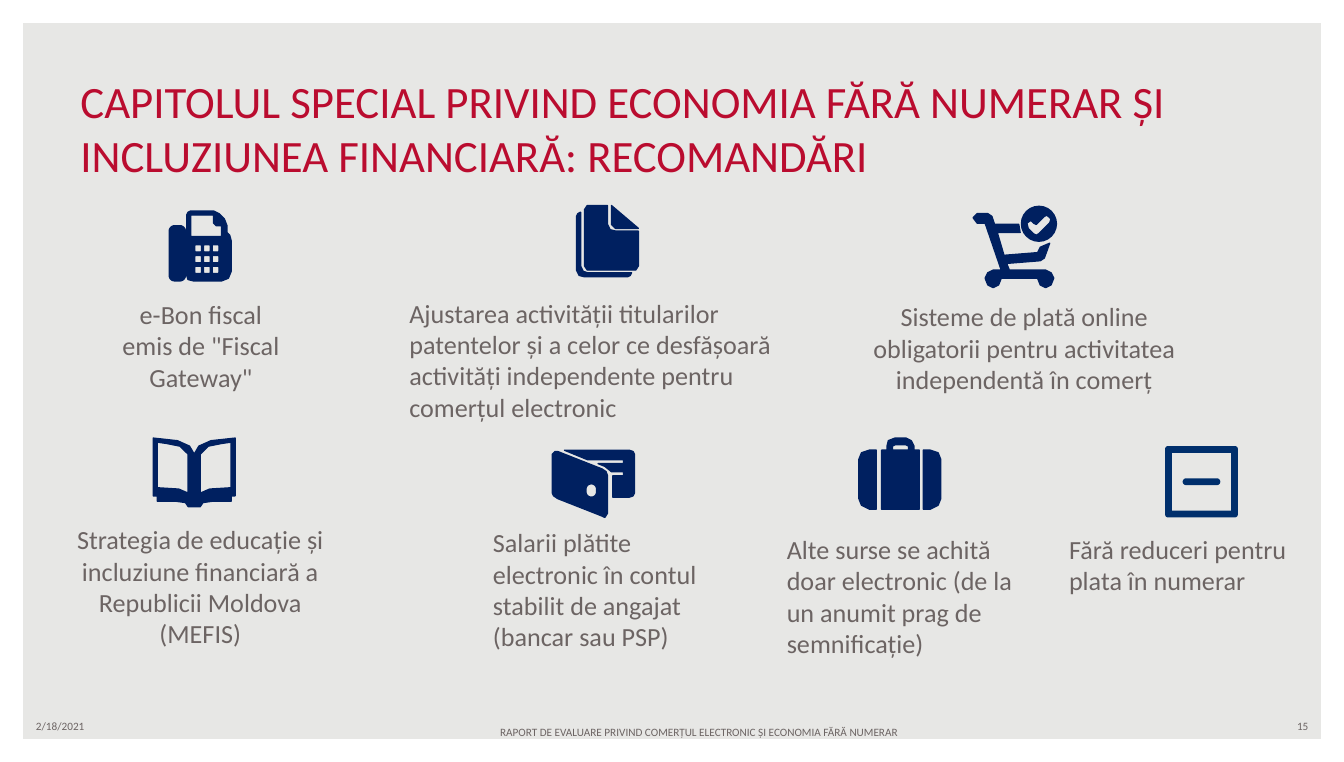
from math import cos, pi, sin

from pptx import Presentation
from pptx.dml.color import RGBColor
from pptx.enum.shapes import MSO_SHAPE as Shape
from pptx.enum.text import MSO_ANCHOR as Anchor, PP_ALIGN as Align
from pptx.util import Pt

BACKGROUND = RGBColor(0xE7, 0xE7, 0xE5)
WHITE = RGBColor(0xFF, 0xFF, 0xFF)
RED = RGBColor(0xBA, 0x0C, 0x2F)
GREY = RGBColor(0x6C, 0x64, 0x63)
NAVY = RGBColor(0x00, 0x20, 0x60)
BLUE = RGBColor(0x00, 0x2F, 0x6C)
FONT = "Calibri"
WIDTH, HEIGHT = 720, 408.24
GRID = 0.72
DETAIL = 100

TITLE = "CAPITOLUL SPECIAL PRIVIND ECONOMIA FĂRĂ NUMERAR ȘI INCLUZIUNEA FINANCIARĂ: RECOMANDĂRI"
TITLE_BOX = (36, 5.8, 643.7, 123.8)

FOOTERS = [
    ("2/18/2021", (12.2, 381.6, 168, 14.4), Align.LEFT),
    ("RAPORT DE EVALUARE PRIVIND COMERȚUL ELECTRONIC ȘI ECONOMIA FĂRĂ NUMERAR",
     (246.2, 388.1, 256.3, 8.6), Align.CENTER),
    ("15", (540, 381.6, 168, 14.4), Align.RIGHT),
]

RECOMMENDATIONS = [
    ('e-Bon fiscal emis de "Fiscal Gateway"', (54, 156.2, 107.3, 58.3), Align.CENTER),
    ("Ajustarea activității titularilor patentelor și a celor ce desfășoară "
     "activități independente pentru comerțul electronic", (212.2, 155.6, 221, 92.2), Align.LEFT),
    ("Sisteme de plată online obligatorii pentru activitatea independentă în comerț",
     (452.7, 157.5, 192.2, 58.3), Align.CENTER),
    ("Strategia de educație și incluziune financiară a Republicii Moldova (MEFIS)",
     (31, 277, 152.6, 74.9), Align.CENTER),
    ("Salarii plătite electronic în contul stabilit de angajat (bancar sau PSP)",
     (257, 278.6, 128.9, 92.2), Align.LEFT),
    ("Alte surse se achită doar electronic (de la un anumit prag de semnificație)",
     (414.4, 282.2, 136.1, 92.2), Align.LEFT),
    ("Fără reduceri pentru plata în numerar", (565.6, 282.2, 142.6, 58.3), Align.LEFT),
]


def rounded(left, top, right, bottom, radius):
    corners = [(right - radius, bottom - radius), (left + radius, bottom - radius),
               (left + radius, top + radius), (right - radius, top + radius)]
    return [(x + radius * cos(angle), y + radius * sin(angle))
            for quarter, (x, y) in enumerate(corners)
            for angle in [(quarter + step / 6) * pi / 2 for step in range(7)]]


def mirrored(points, axis):
    return [(2 * axis - x, y) for x, y in reversed(points)]


FAX = [
    rounded(126, 168, 138, 209, 4),
    [(139, 160), (140, 158), (142, 157), (159, 157), (163, 159), (167, 163), (169, 168),
     (169, 173), (171, 175), (172, 179), (172, 202), (170, 207), (165, 209), (144, 209),
     (140, 208), (139, 205)],
    [(165, 168), (161, 168), (159, 166), (159, 160), (142, 160), (142, 176), (165, 176)],
] + [rounded(x, y, x + 5, y + 5.5, 0.8) for y in (182, 190, 198) for x in (145, 151.5, 158)]

DOCUMENTS = [
    [(437, 153), (452, 153), (452, 167), (454, 171), (458, 172), (475, 172), (475, 198),
     (473, 201), (437, 201), (435, 198), (435, 156)],
    [(455, 153), (475, 170), (458, 170), (455, 167)],
    [(437, 203), (470, 203), (469, 205), (467, 206), (435, 206), (431, 205), (429, 201),
     (429, 161), (430, 159), (432, 158), (432, 198), (434, 202)],
]

CART = [
    rounded(760, 153.5, 786, 179.5, 13),
    [(779, 160), (777, 161), (771, 167), (769, 166), (767, 164), (764, 166), (765, 170),
     (769, 174), (771, 175), (773, 174), (781, 166), (782, 163)],
    [(747, 190), (772, 188), (774, 184), (781, 181), (777, 192), (774, 194), (749, 196),
     (751, 201), (778, 201), (782, 203), (784, 207), (782, 212), (778, 214), (774, 212),
     (772, 207), (745, 207), (743, 212), (739, 214), (735, 212), (733, 207), (735, 203),
     (739, 201), (745, 201), (733, 166), (727, 166), (724, 162), (727, 159), (735, 159),
     (738, 161), (740, 167), (758, 167), (759, 173), (742, 173)],
]

BOOK_AXIS = 144.5
BOOK_COVER = [(144.5, 338), (141, 332), (132, 328), (114, 326), (114, 369), (117, 369),
              (117, 373), (131, 373), (138, 374), (140, 377)]
BOOK_PAGE = [(140, 367), (133, 364), (117, 363), (117, 329), (124, 330), (134, 332), (140, 338)]
BOOK = [BOOK_COVER + mirrored(BOOK_COVER, BOOK_AXIS), BOOK_PAGE, mirrored(BOOK_PAGE, BOOK_AXIS)]

WALLET_CARD = [
    [(468, 335), (420, 335), (437, 342), (464, 342), (464, 345), (445, 345), (450, 347),
     (455, 351), (464, 351), (464, 354), (456, 354), (456, 370), (468, 370), (471, 369),
     (472, 367), (472, 338), (471, 336)],
]
WALLET = [
    [(448, 349), (415, 336), (413, 336), (411, 338), (411, 367), (412, 369), (415, 371),
     (448, 384), (450, 385), (452, 382), (452, 354), (451, 351)],
    rounded(436, 360, 444, 370, 4),
]

SUITCASE_SIDE = [(647, 335), (652, 335), (652, 379), (647, 379), (641, 376), (639, 371),
                 (639, 342), (641, 337)]
SUITCASE = [
    SUITCASE_SIDE,
    mirrored(SUITCASE_SIDE, 669.5),
    [(656, 335), (660, 335), (660, 332), (661, 328), (666, 326), (674, 326), (678, 328),
     (680, 332), (680, 335), (684, 335), (684, 379), (656, 379)],
    [(664, 335), (676, 335), (676, 332), (674, 331), (666, 331), (664, 332)],
]

MINUS = [rounded(867, 332, 921, 385, 2), rounded(872, 337, 916, 380, 0),
         rounded(880, 356, 908, 361, 2.5)]

ICONS = [(FAX, NAVY, True), (DOCUMENTS, NAVY, True), (CART, NAVY, True), (BOOK, NAVY, True),
         (WALLET_CARD, NAVY, True), (WALLET, NAVY, True), (SUITCASE, NAVY, True),
         (MINUS, BLUE, False)]


def add_text(slide, text, box, size, color, align=Align.LEFT, anchor=Anchor.TOP):
    shape = slide.shapes.add_textbox(*map(Pt, box))
    frame = shape.text_frame
    frame.word_wrap = True
    frame.vertical_anchor = anchor
    paragraph = frame.paragraphs[0]
    paragraph.alignment = align
    run = paragraph.add_run()
    run.text = text
    run.font.name = FONT
    run.font.size = Pt(size)
    run.font.color.rgb = color
    return frame


def paint(shape, color, outlined):
    shape.shadow.inherit = False
    shape.fill.solid()
    shape.fill.fore_color.rgb = color
    if outlined:
        shape.line.color.rgb = color
        shape.line.width = Pt(0.75)
    else:
        shape.line.fill.background()


def add_icon(slide, outlines, color, outlined):
    scaled = [[(x * DETAIL, y * DETAIL) for x, y in outline] for outline in outlines]
    builder = slide.shapes.build_freeform(*scaled[0][0], scale=Pt(GRID) / DETAIL)
    for index, outline in enumerate(scaled):
        if index:
            builder.move_to(*outline[0])
        builder.add_line_segments(outline[1:], close=True)
    paint(builder.convert_to_shape(), color, outlined)


def main():
    presentation = Presentation()
    presentation.slide_width, presentation.slide_height = Pt(WIDTH), Pt(HEIGHT)
    slide = presentation.slides.add_slide(presentation.slide_layouts[6])
    slide.background.fill.solid()
    slide.background.fill.fore_color.rgb = BACKGROUND

    border = slide.shapes.add_shape(Shape.FRAME, 0, 0, Pt(WIDTH), Pt(HEIGHT))
    border.adjustments[0] = 0.03
    paint(border, WHITE, False)

    for text, box, align in FOOTERS:
        add_text(slide, text, box, 6, GREY, align, Anchor.MIDDLE)
    title = add_text(slide, TITLE, TITLE_BOX, 24, RED, anchor=Anchor.BOTTOM)
    title.margin_bottom = Pt(32.6)
    for text, box, align in RECOMMENDATIONS:
        add_text(slide, text, box, 14, GREY, align)
    for icon in ICONS:
        add_icon(slide, *icon)

    presentation.save("out.pptx")


if __name__ == "__main__":
    main()
